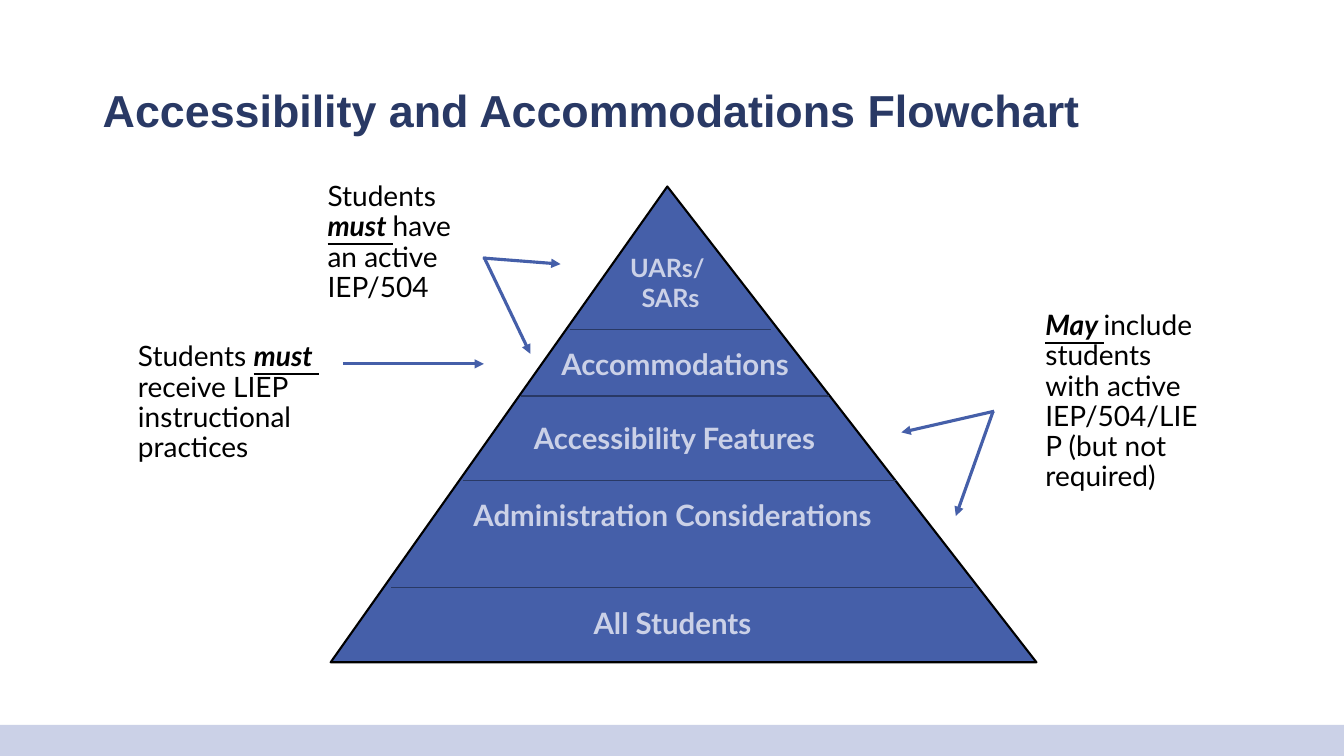
from lxml import etree
from pptx import Presentation
from pptx.dml.color import RGBColor
from pptx.enum.shapes import MSO_CONNECTOR, MSO_SHAPE
from pptx.enum.text import MSO_ANCHOR, MSO_AUTO_SIZE, PP_ALIGN
from pptx.oxml.ns import qn
from pptx.util import Pt

LINE = MSO_CONNECTOR.STRAIGHT
PEAK = MSO_SHAPE.ISOSCELES_TRIANGLE
RECT = MSO_SHAPE.RECTANGLE
TOP, MIDDLE = MSO_ANCHOR.TOP, MSO_ANCHOR.MIDDLE
GROW, FIXED = MSO_AUTO_SIZE.SHAPE_TO_FIT_TEXT, MSO_AUTO_SIZE.NONE
LEFT, CENTER = PP_ALIGN.LEFT, PP_ALIGN.CENTER
PX = 9144


class Theme:
    navy = RGBColor.from_string("293965")
    blue = RGBColor.from_string("455FA9")
    pale = RGBColor.from_string("CBD1E7")
    black = RGBColor.from_string("000000")
    head = "Arial"
    body = "Lato"
    title = Pt(32)
    tier = Pt(21)
    tip = Pt(18)
    note = Pt(20)
    edge = Pt(1.5)
    rule = Pt(1)
    arrow = Pt(2.25)


deck = Presentation()
deck.slide_width, deck.slide_height = 1333 * PX, 750 * PX
slide = deck.slides.add_slide(deck.slide_layouts[6])
shapes = slide.shapes


def add_text(box, lines, font, size, color, align=LEFT, anchor=TOP, fit=GROW, space=1, before=0):
    frame = shapes.add_textbox(*[n * PX for n in box]).text_frame
    frame.word_wrap = True
    frame.auto_size = fit
    frame.vertical_anchor = anchor
    for i, line in enumerate(lines):
        para = frame.add_paragraph() if i else frame.paragraphs[0]
        para.alignment = align
        para.line_spacing = space
        para.space_before = Pt(before)
        for words, bold, stress in line:
            run = para.add_run()
            run.text = words
            run.font.name = font
            run.font.size = size
            run.font.color.rgb = color
            run.font.bold = bold
            run.font.italic = run.font.underline = stress


def add_line(ends, color, width, arrow=False):
    line = shapes.add_connector(LINE, *[n * PX for n in ends])
    line.line.color.rgb = color
    line.line.width = width
    if arrow:
        etree.SubElement(line.line._get_or_add_ln(), qn("a:tailEnd"), type="triangle")
    etree.SubElement(line._element.spPr, qn("a:effectLst"))


forms = [
    (PEAK, (328, 185, 700, 472), Theme.blue),
    (RECT, (0, 719, 1333, 31), Theme.pale),
]
for kind, box, color in forms:
    form = shapes.add_shape(kind, *[n * PX for n in box])
    form.shadow.inherit = False
    form.fill.solid()
    form.fill.fore_color.rgb = color
    if kind == PEAK:
        form.adjustments[0] = 0.477
        form.line.color.rgb = Theme.black
        form.line.width = Theme.edge
    else:
        form.line.fill.background()

add_text((92, 40, 1150, 145), [[("Accessibility and Accommodations Flowchart", True, False)]],
         Theme.head, Theme.title, Theme.navy, anchor=MIDDLE, fit=FIXED, space=0.9)

tiers = [
    ((579, 245, 172, 71), ["UARs/ ", "SARs"], Theme.tip),
    ((537, 338, 265, 45), ["Accommodations"], Theme.tier),
    ((505, 412, 328, 45), ["Accessibility Features"], Theme.tier),
    ((459, 488, 416, 81), ["Administration Considerations"], Theme.tier),
    ((388, 595, 558, 45), ["All Students"], Theme.tier),
]
for box, names, size in tiers:
    add_text(box, [[(name, True, False)] for name in names], Theme.body, size, Theme.pale, CENTER)

rules = [(565, 765, 327), (517, 822, 393), (459, 890, 477), (388, 965, 583)]
for start, end, y in rules:
    add_line((start, y, end, y), Theme.navy, Theme.rule)

notes = [
    ((1027, 304, 181, 236), "", "May ", "include students with active IEP/504/LIEP (but not required)"),
    ((127, 335, 201, 176), "Students ", "must ", " receive LIEP instructional practices"),
    ((315, 176, 155, 176), "Students ", "must ", "have an active IEP/504"),
]
for box, lead, stress, rest in notes:
    runs = [(lead, False, False), (stress, True, True), (rest, False, False)]
    add_text(box, [[run for run in runs if run[0]]], Theme.body, Theme.note, Theme.black,
             space=0.9, before=10)

arrows = [
    (480, 255, 526, 351),
    (479, 256, 556, 262),
    (340, 361, 480, 361),
    (986, 408, 894, 429),
    (985, 408, 948, 512),
]
for ends in arrows:
    add_line(ends, Theme.blue, Theme.arrow, True)

deck.save("out.pptx")
